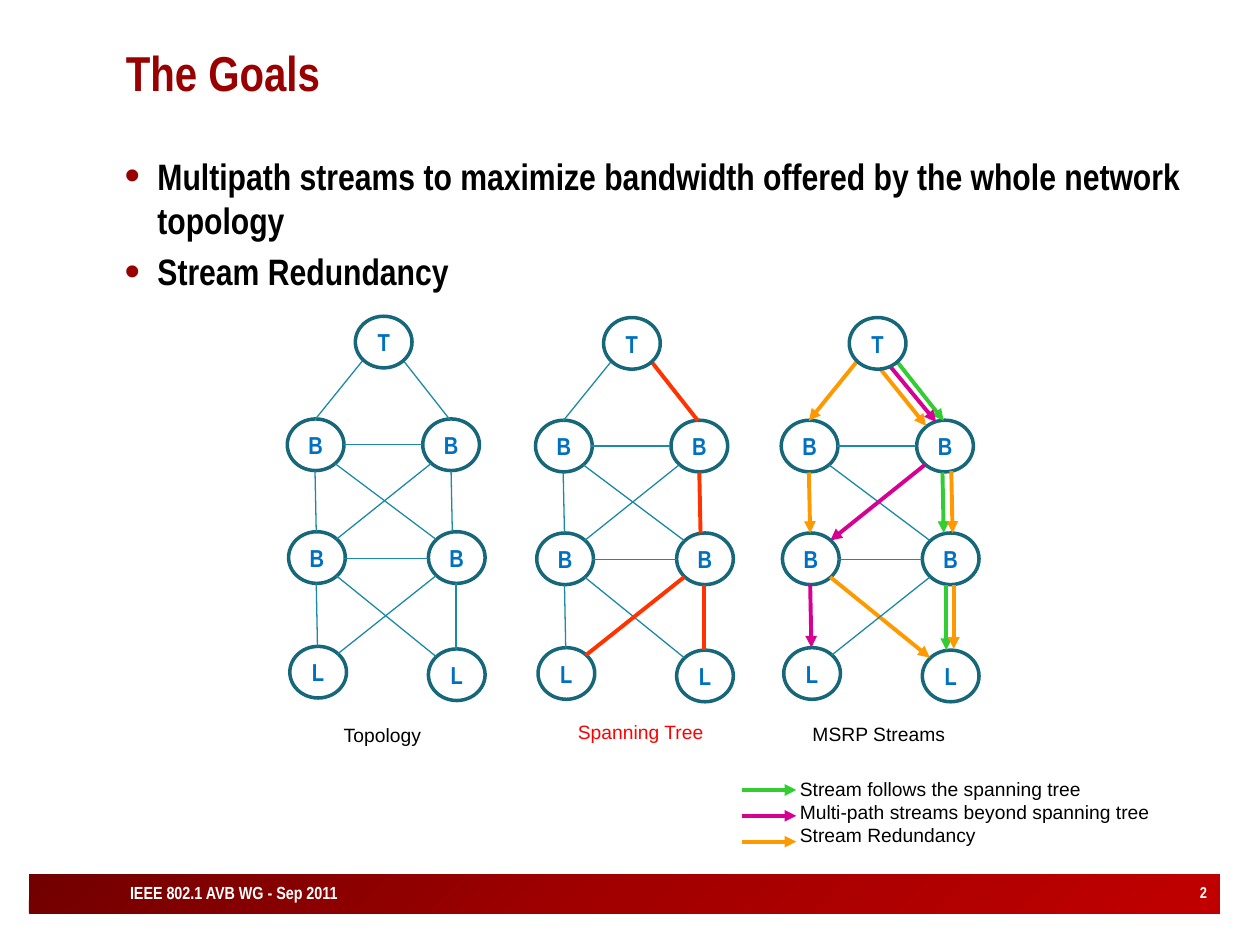
from copy import deepcopy
from lxml.etree import SubElement
from pptx import Presentation
from pptx.dml.color import RGBColor
from pptx.enum.shapes import MSO_CONNECTOR, MSO_SHAPE
from pptx.enum.text import MSO_ANCHOR, PP_ALIGN
from pptx.oxml.ns import qn
from pptx.util import Inches, Pt

hue = RGBColor.from_string
deck = Presentation()
deck.slide_width, deck.slide_height = Inches(10), Inches(7.5)
slide = deck.slides.add_slide(deck.slide_layouts[6])
shapes = slide.shapes
cell = deck.slide_width / 100

LEFT, MID, RIGHT = PP_ALIGN.LEFT, PP_ALIGN.CENTER, PP_ALIGN.RIGHT
TEAL, RED, GREEN = "1B8AA5", "FF3300", "33CC33"
PINK, GOLD = "D60093", "FF9900"


def write(shape, lines, size, color, font="Arial", bold=False, align=LEFT,
          pad=(1, 0.5), anchor=MSO_ANCHOR.TOP):
    frame = shape.text_frame
    frame.word_wrap = True
    frame.vertical_anchor = anchor
    frame.margin_left = frame.margin_right = int(pad[0] * cell)
    frame.margin_top = frame.margin_bottom = int(pad[1] * cell)
    for i, line in enumerate(lines):
        para = frame.paragraphs[0] if i == 0 else frame.add_paragraph()
        para.alignment = align
        run = para.add_run()
        run.text = line
        run.font.size, run.font.name, run.font.bold = Pt(size), font, bold
        run.font.color.rgb = hue(color)
    return frame.paragraphs


def link(ends, color, arrow=False, base=(0, 0)):
    spots = [int((n + base[i % 2]) * cell) for i, n in enumerate(ends)]
    line = shapes.add_connector(MSO_CONNECTOR.STRAIGHT, *spots)
    line.line.color.rgb = hue(color)
    line.line.width = Pt(0.75 if color == TEAL else 2.25)
    if arrow:
        SubElement(line.line._get_or_add_ln(), qn("a:tailEnd"), type="triangle")
    SubElement(line._element.spPr, qn("a:effectLst"))


bar = shapes.add_shape(MSO_SHAPE.RECTANGLE, *[int(n * cell) for n in (2.3, 69.4, 94.5, 3.1)])
bar.shadow.inherit = False
bar.line.fill.background()
bar.fill.gradient()
bar.fill.gradient_angle = 315
stops = bar._element.spPr.find(".//" + qn("a:gsLst"))
stops.append(deepcopy(stops[-1]))
for stop, spot, color in zip(bar.fill.gradient_stops, (0, 0.5, 1), ("720000", "A20000", "C00000")):
    stop.position = spot
    stop.color.rgb = hue(color)

NARROW = "Arial Narrow"
texts = [
    ((9, 2.1, 76.3, 8), ["The Goals"], 28, "990000", NARROW, True, LEFT, (1, 0), MSO_ANCHOR.MIDDLE),
    ((9, 11.7, 87, 11.2),
     ["Multipath streams to maximize bandwidth offered by the whole network topology",
      "Stream Redundancy"], 21, "000000", NARROW, True, LEFT, (0.9, 0.5)),
    ((93.7, 70.1, 2.1, 1.5), ["2"], 9, "FFFFFF", NARROW, True, RIGHT, (0, 0)),
    ((4, 70, 29.1, 1.7), ["IEEE 802.1 AVB WG - Sep 2011"], 10, "FFFFFF", NARROW, True, MID, (0, 0)),
    ((23.5, 56.9, 13.7, 2.6), ["Topology"], 11, "000000", "Arial", False, MID),
    ((44, 56.7, 13.7, 2.6), ["Spanning Tree"], 11, "FF0000", "Arial", False, MID),
    ((62.9, 56.8, 13.7, 2.6), ["MSRP Streams"], 11, "000000", "Arial", False, MID),
    ((62.5, 61.2, 33, 8.4),
     ["Stream follows the spanning tree", "Multi-path streams beyond spanning tree",
      "Stream Redundancy"], 11, "000000"),
]
blocks = [write(shapes.add_textbox(*[int(n * cell) for n in area]), *look)
          for area, *look in texts]
blocks[0][0].line_spacing = 0.85
for i, para in enumerate(blocks[1]):
    if i:
        para.space_before = Pt(4.2)
    props = para._p.get_or_add_pPr()
    props.set("marL", str(Inches(0.26)))
    props.set("indent", str(-Inches(0.26)))
    tint = SubElement(props, qn("a:buClr"))
    SubElement(tint, qn("a:srgbClr"), val="990000")
    SubElement(props, qn("a:buSzPct"), val="120000")
    SubElement(props, qn("a:buFont"), typeface="Arial")
    SubElement(props, qn("a:buChar"), char="•")

nodes = [("B", 0, 8.15), ("B", 10.75, 8.15), ("B", 0.1, 17.1), ("B", 11.2, 17.1),
         ("L", 0.2, 26.2), ("L", 11.2, 26.4), ("T", 5.4, 0)]
links = {
    "top left": (6, 3.5, 2.2, 8.2), "top right": (9.2, 3.5, 12.9, 8.2),
    "left": (2.2, 12.3, 2.3, 17.1), "right": (13, 12.3, 13.1, 17.1),
    "down": (3.8, 11.7, 11.8, 17.7), "up": (11.4, 11.7, 3.9, 17.7),
    "low left": (2.3, 21.2, 2.4, 26.2), "low right": (13.4, 21.2, 13.4, 26.4),
    "low down": (3.9, 20.6, 11.8, 27), "low up": (11.8, 20.6, 4, 26.8),
    "bridge": (4.4, 10.2, 10.7, 10.2), "low bridge": (4.5, 19.2, 11.2, 19.2),
}
tree = dict.fromkeys(["top right", "right", "low right", "low up"], RED)
streams = {"top left": GOLD, "top right": GREEN, "left": GOLD, "low down": GOLD,
           "low left": PINK, "up": PINK, "right": None, "low right": None}
extra = [((12.8, 12.3, 12.9, 17.1), GREEN), ((13.1, 21.2, 13.1, 26.4), GREEN),
         ((8.5, 3.7, 12.3, 8.3), PINK), ((7.8, 4, 11.5, 8.6), GOLD),
         ((13.5, 12.2, 13.6, 17.1), GOLD), ((13.7, 21.2, 13.7, 26.3), GOLD)]

graphs = [((22.8, 25.1), {}, []), ((42.5, 25.2), tree, []), ((62, 25.2), streams, extra)]
for base, paint, more in graphs:
    for name, x, y in nodes:
        if name == "T":
            for key, ends in links.items():
                color = paint.get(key, TEAL)
                if color:
                    link(ends, color, color not in (TEAL, RED), base)
            for ends, color in more:
                link(ends, color, True, base)
        area = (base[0] + x, base[1] + y, 4.5, 4.1)
        node = shapes.add_shape(MSO_SHAPE.OVAL, *[int(n * cell) for n in area])
        node.shadow.inherit = False
        node.fill.solid()
        node.fill.fore_color.rgb = hue("FFFFFF")
        node.line.color.rgb = hue("17677A")
        node.line.width = Pt(2)
        write(node, [name], 14, "0070C0", NARROW, True, MID, (0, 0), MSO_ANCHOR.MIDDLE)

for i, color in enumerate((GREEN, PINK, GOLD)):
    y = 62.7 + 2.05 * i
    link((58.9, y, 63.2, y), color, True)

deck.save("out.pptx")
